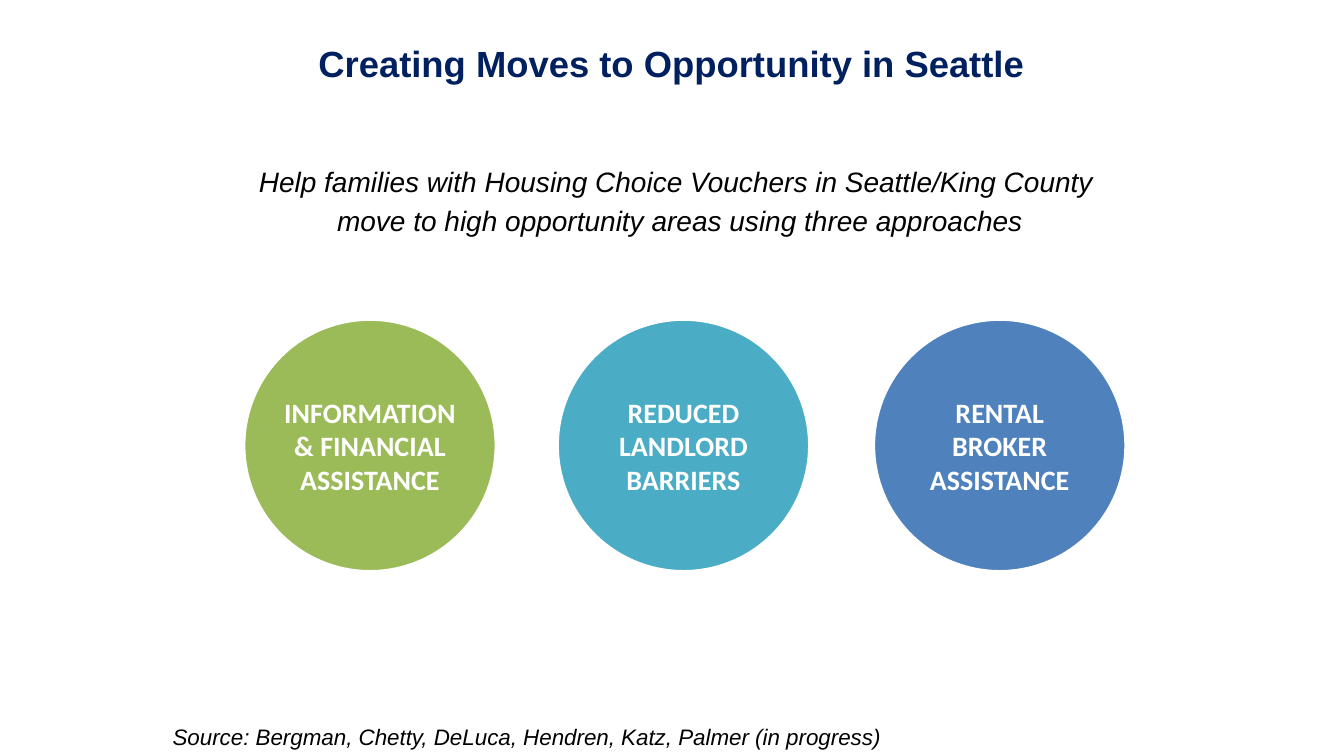
"""Build the slide on Creating Moves to Opportunity in Seattle."""
from pptx import Presentation
from pptx.dml.color import RGBColor
from pptx.enum.shapes import MSO_SHAPE
from pptx.enum.text import MSO_ANCHOR, PP_ALIGN
from pptx.util import Cm, Pt


def rgb(value):
    """Turn a hex string into a colour."""
    return RGBColor.from_string(value)


def write(sp, lines, size, color, font="Arial", bold=False, italic=False,
          align=PP_ALIGN.CENTER, anchor=MSO_ANCHOR.TOP, before=0):
    """Fill a shape with formatted paragraphs."""
    tf = sp.text_frame
    tf.word_wrap = True
    tf.vertical_anchor = anchor
    tf.text = "\n".join(lines)
    for p in tf.paragraphs:
        p.alignment = align
        p.space_before = Pt(before)
        for r in p.runs:
            r.font.name = font
            r.font.size = Pt(size)
            r.font.bold = bold
            r.font.italic = italic
            r.font.color.rgb = rgb(color)


prs = Presentation()
prs.slide_width, prs.slide_height = Cm(33.87), Cm(19.05)
s = prs.slides.add_slide(prs.slide_layouts[6])

title = s.shapes.add_textbox(Cm(4.23), Cm(0.64), Cm(25.4), Cm(1.9))
write(title, ["Creating Moves to Opportunity in Seattle"], 26, "002060",
      bold=True, anchor=MSO_ANCHOR.MIDDLE)

goal = s.shapes.add_textbox(Cm(5.5), Cm(4.02), Cm(23.28), Cm(15))
write(goal, ["Help families with Housing Choice Vouchers in Seattle/King County ",
             "move to high opportunity areas using three approaches"],
      20, "000000", italic=True, before=4)

approaches = [
    (6.15, "9BBB59", "INFORMATION & FINANCIAL ASSISTANCE"),
    (14.05, "4BACC6", "REDUCED LANDLORD BARRIERS"),
    (22.02, "4F81BD", "RENTAL BROKER ASSISTANCE"),
]
for left, color, label in approaches:
    sp = s.shapes.add_shape(MSO_SHAPE.OVAL, Cm(left), Cm(8.05), Cm(6.35), Cm(6.35))
    sp.shadow.inherit = False
    sp.fill.solid()
    sp.fill.fore_color.rgb = rgb(color)
    sp.line.color.rgb = rgb("FFFFFF")
    sp.line.width = Pt(2)
    tf = sp.text_frame
    tf.margin_left = tf.margin_right = tf.margin_top = tf.margin_bottom = 0
    write(sp, [label], 20, "FFFFFF", font="Calibri", bold=True,
          anchor=MSO_ANCHOR.MIDDLE)

source = s.shapes.add_textbox(Cm(4.1), Cm(18.11), Cm(18.6), Cm(0.94))
write(source, ["Source: Bergman, Chetty, DeLuca, Hendren, Katz, Palmer (in progress)"],
      16, "000000", italic=True, align=PP_ALIGN.LEFT)
source.text_frame.word_wrap = False

prs.save("out.pptx")
